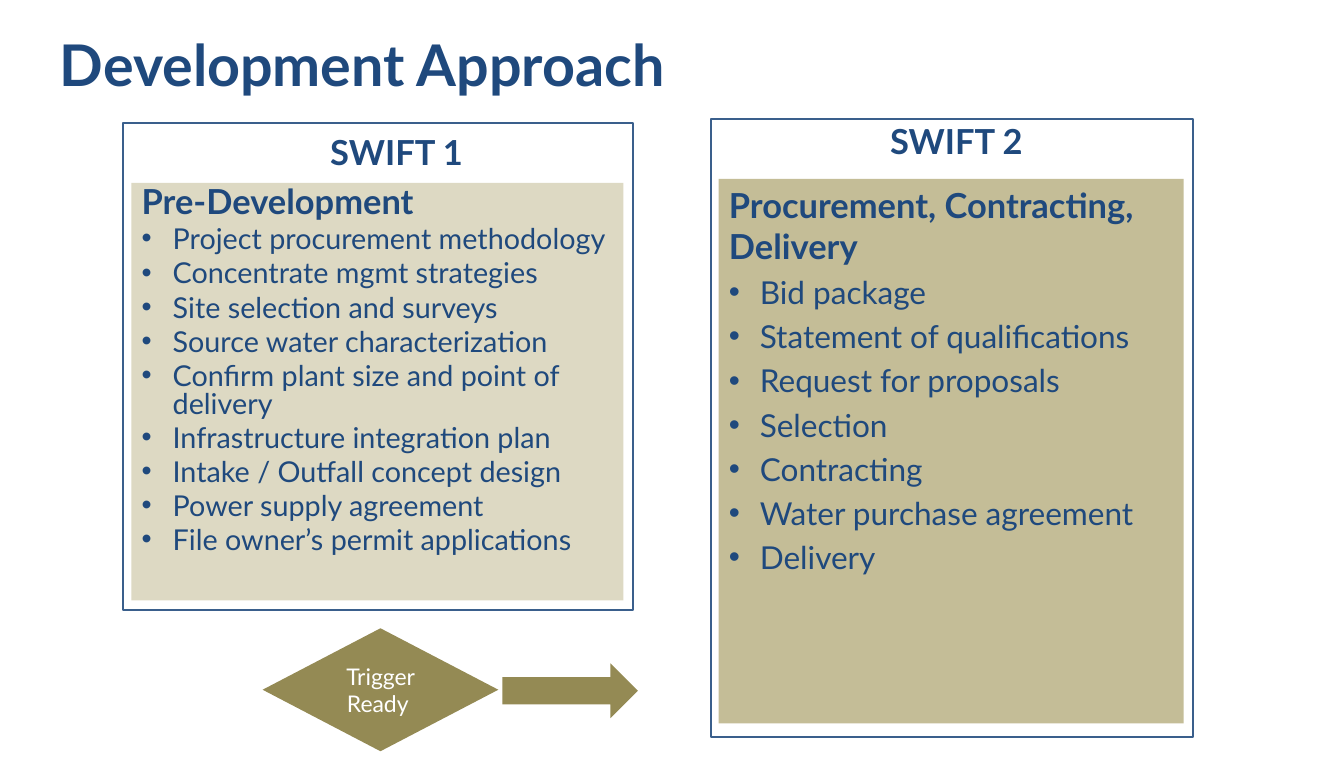
"""Build the Development Approach slide with two phase panels and a trigger."""
import pptx
import pptx.dml.color
import pptx.enum.shapes
import pptx.enum.text
import pptx.util
import lxml.etree

COLORS = {"navy": "1F497D", "frame": "3A5F8C", "sand": "DDD9C3",
          "khaki": "C4BD97", "olive": "948A54", "white": "FFFFFF"}
SHAPE = pptx.enum.shapes.MSO_SHAPE
ALIGN = pptx.enum.text.PP_ALIGN
ANCHOR = pptx.enum.text.MSO_ANCHOR
COLS, ROWS = 130, 75

prs = pptx.Presentation()
prs.slide_width = pptx.util.Inches(13)
prs.slide_height = pptx.util.Inches(7.5)
col, row = prs.slide_width / COLS, prs.slide_height / ROWS
s = prs.slides.add_slide(prs.slide_layouts[3])


def cells(x, y, w, h):
    return [round(n) for n in (x * col, y * row, w * col, h * row)]


def style(p, size, color, bold=False, align=ALIGN.LEFT):
    p.alignment = align
    for r in p.runs:
        r.font.name = "Lato"
        r.font.size = pptx.util.Pt(size)
        r.font.bold = bold
        r.font.color.rgb = pptx.dml.color.RGBColor.from_string(COLORS[color])


panels = [
    {"name": "SWIFT 1", "frame": (11.9, 11.9, 49.3, 47.1), "label": (21.3, 12.2, 34.1, 5),
     "body": (12.7, 17.7, 47.6, 40.4), "fill": "sand", "size": 20, "spacing": 0.8,
     "before": (4.6, 4.6), "head_indent": 0.3, "head": "Pre-Development",
     "items": ["Project procurement methodology", "Concentrate mgmt strategies",
               "Site selection and surveys", "Source water characterization",
               "Confirm plant size and point of delivery",
               "Infrastructure integration plan", "Intake / Outfall concept design",
               "Power supply agreement", "File owner’s permit applications"]},
    {"name": "SWIFT 2", "frame": (68.8, 11.5, 46.6, 59.8), "label": (75.4, 11.1, 34.2, 5),
     "body": (69.5, 17.3, 45, 52.7), "fill": "khaki", "size": 22, "spacing": 1.0,
     "before": (4.8, 4.4), "head_indent": 0, "head": "Procurement, Contracting, Delivery",
     "items": ["Bid package", "Statement of qualifications", "Request for proposals",
               "Selection", "Contracting", "Water purchase agreement", "Delivery"]},
]

for idx, panel in enumerate(panels, start=1):
    frame = s.shapes.add_shape(SHAPE.RECTANGLE, *cells(*panel["frame"]))
    frame.shadow.inherit = False
    frame.fill.background()
    frame.line.color.rgb = pptx.dml.color.RGBColor.from_string(COLORS["frame"])
    frame.line.width = pptx.util.Pt(1.5)

    label = s.shapes.add_textbox(*cells(*panel["label"]))
    label.text_frame.word_wrap = True
    label.text_frame.text = panel["name"]
    style(label.text_frame.paragraphs[0], 24, "navy", True, ALIGN.CENTER)

    body = s.placeholders[idx]
    body.left, body.top, body.width, body.height = cells(*panel["body"])
    body.fill.solid()
    body.fill.fore_color.rgb = pptx.dml.color.RGBColor.from_string(COLORS[panel["fill"]])
    tf = body.text_frame
    tf.auto_size = pptx.enum.text.MSO_AUTO_SIZE.NONE
    tf.vertical_anchor = ANCHOR.TOP
    tf.text = "\n".join([panel["head"], *panel["items"]])
    for i, p in enumerate(tf.paragraphs):
        is_head = i == 0
        style(p, 24 if is_head else panel["size"], "navy", is_head)
        p.line_spacing = panel["spacing"]
        p.space_before = pptx.util.Pt(panel["before"][0 if is_head else 1])
        indent = pptx.util.Inches(panel["head_indent"] if is_head else 0.3)
        pPr = p._p.get_or_add_pPr()
        pPr.set("marL", str(indent))
        pPr.set("indent", str(-indent))
        if is_head:
            lxml.etree.SubElement(pPr, pptx.oxml.ns.qn("a:buNone"))
        else:
            font = lxml.etree.SubElement(pPr, pptx.oxml.ns.qn("a:buFont"))
            font.set("typeface", "Arial")
            bullet = lxml.etree.SubElement(pPr, pptx.oxml.ns.qn("a:buChar"))
            bullet.set("char", "•")

title = s.shapes.title
title.left, title.top, title.width, title.height = cells(4.8, 2.3, 62.9, 7.7)
tf = title.text_frame
tf.text = "Development Approach"
tf.auto_size = pptx.enum.text.MSO_AUTO_SIZE.NONE
tf.word_wrap = False
tf.vertical_anchor = ANCHOR.TOP
style(tf.paragraphs[0], 40, "navy", True)

for kind, box, text in [(SHAPE.FLOWCHART_DECISION, (25.4, 60.8, 22.8, 11.9), "Trigger Ready "),
                        (SHAPE.RIGHT_ARROW, (48.6, 64.2, 13.1, 5.3), "")]:
    sp = s.shapes.add_shape(kind, *cells(*box))
    sp.shadow.inherit = False
    sp.fill.solid()
    sp.fill.fore_color.rgb = pptx.dml.color.RGBColor.from_string(COLORS["olive"])
    sp.line.fill.background()
    if text:
        sp.text_frame.text = text
        sp.text_frame.vertical_anchor = ANCHOR.MIDDLE
        style(sp.text_frame.paragraphs[0], 16, "white", False, ALIGN.CENTER)

prs.save("out.pptx")
